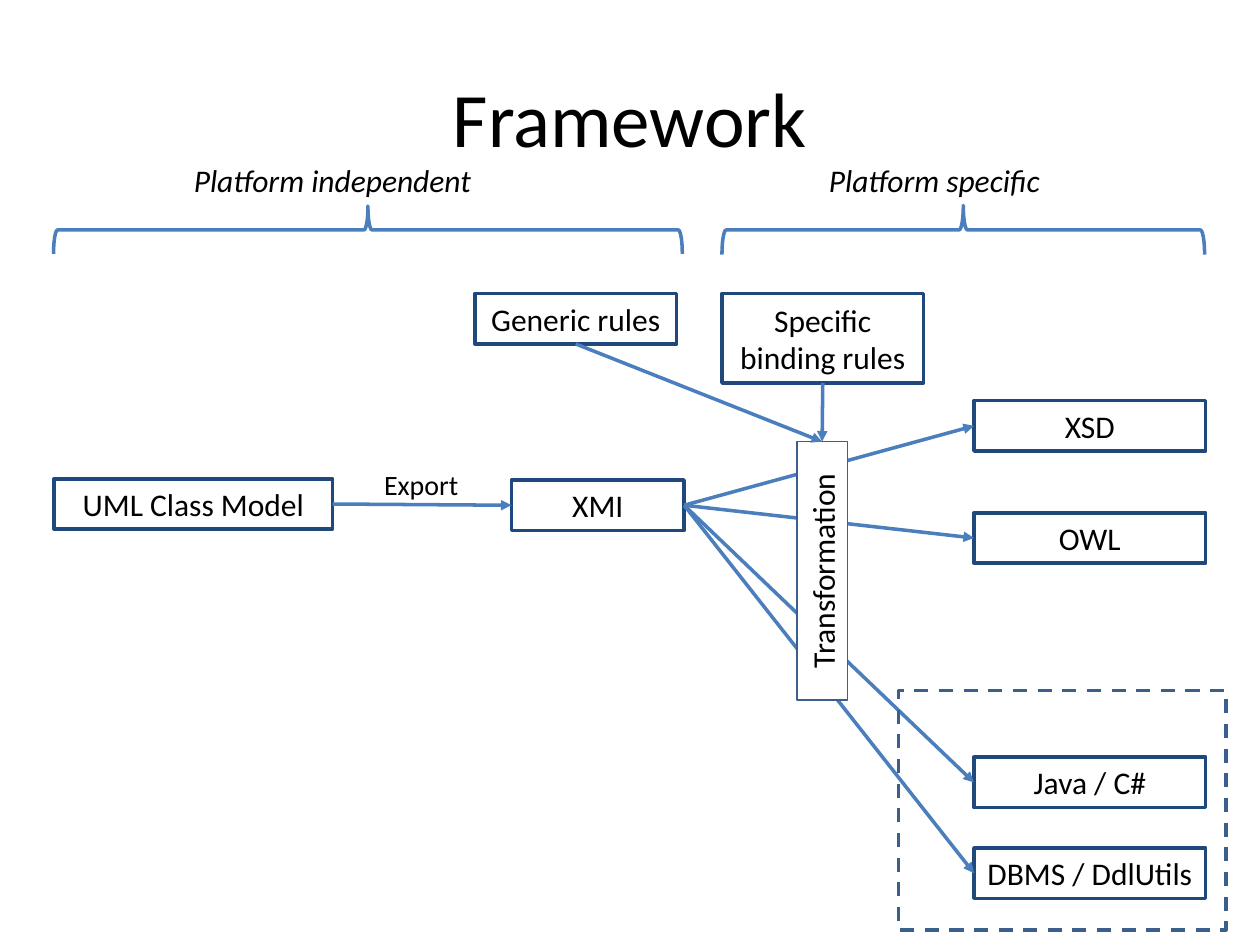
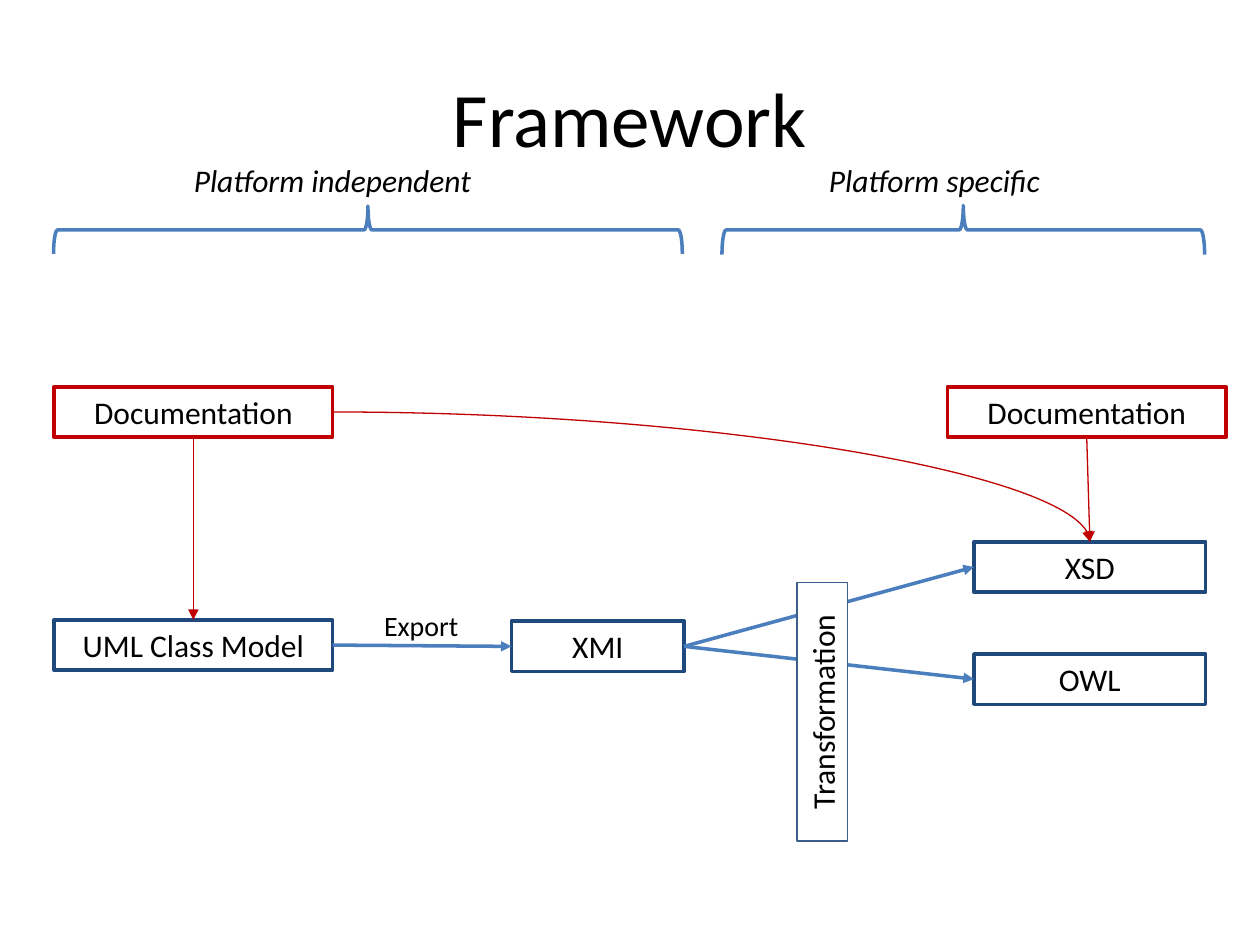
from dataclasses import dataclass

from lxml import etree
from pptx import Presentation
from pptx import util as u
from pptx.dml.color import RGBColor
from pptx.enum import dml, shapes, text
from pptx.oxml.ns import qn

PX = u.Inches(1) // 100  # 100 px to the inch
FONT = "Calibri"
HUES = {"ink": "000000", "paper": "FFFFFF", "navy": "1F497D",
        "blue": "4B7EBC", "steel": "3A5F8C", "red": "C00000"}
TOP, LEFT, BASE, RIGHT = range(4)
KIND = shapes.MSO_SHAPE
SHIFT = 112  # how far the chain moves down on the second slide


@dataclass(frozen=True)
class Box:
    name: str
    x: int
    y: int
    w: int
    h: int = 40
    hue: str = "navy"


@dataclass(frozen=True)
class Span:
    name: str
    text_x: int
    text_w: int
    x: int
    w: int
    h: int


SPANS = [Span("Platform independent", 144, 246, 43, 499, 38),
         Span("Platform specific", 648, 190, 573, 383, 39)]
MODEL = Box("UML Class Model", 43, 380, 221)
XMI = Box("XMI", 406, 381, 137)
OUTS = [Box("XSD", 773, 318, 184), Box("OWL", 773, 407, 184),
        Box("Java / C#", 773, 601, 184), Box("DBMS / DdlUtils", 773, 673, 184)]
STEP = Box("Transformation", 632, 351, 40, 205, "steel")
RULES = [Box("Generic rules", 377, 233, 160),
         Box("Specific binding rules", 573, 233, 160, 71)]
DOCS = [Box("Documentation", x, 307, 221, hue="red") for x in (43, 752)]


def tint(hue: str) -> RGBColor:
    return RGBColor.from_string(HUES[hue])


def write(shape, words: str, *, size: int = 18, italic: bool = False,
          center: bool = True, middle: bool = True, wrap: bool = True):
    frame = shape.text_frame
    frame.word_wrap = wrap
    frame.vertical_anchor = text.MSO_ANCHOR.MIDDLE if middle else text.MSO_ANCHOR.TOP
    para = frame.paragraphs[0]
    para.alignment = text.PP_ALIGN.CENTER if center else text.PP_ALIGN.LEFT
    run = para.add_run()
    run.text = words
    run.font.name, run.font.size, run.font.italic = FONT, u.Pt(size), italic
    run.font.color.rgb = tint("ink")


def label(slide, words: str, x: int, y: int, w: int, h: int, **style):
    area = slide.shapes.add_textbox(x * PX, y * PX, w * PX, h * PX)
    write(area, words, **style)


def outline(slide, kind, x: int, y: int, w: int, h: int, hue: str, *,
            width: float = 2, turn: int = 0, fill: str = ""):
    """Draw a shape in its visible frame, turned by a quarter if asked."""
    if turn:
        half = int((w - h) / 2)
        x, y, w, h = x + half, y - half, h, w
    shape = slide.shapes.add_shape(kind, x * PX, y * PX, w * PX, h * PX)
    shape.rotation = turn
    shape.shadow.inherit = False
    if fill:
        shape.fill.solid()
        shape.fill.fore_color.rgb = tint(fill)
    else:
        shape.fill.background()
    shape.line.color.rgb = tint(hue)
    shape.line.width = u.Pt(width)
    return shape


def block(slide, box: Box, dy: int = 0, **style):
    shape = outline(slide, KIND.RECTANGLE, box.x, box.y + dy, box.w, box.h,
                    box.hue, **style)
    write(shape, box.name)
    return shape


def link(slide, start, out: int, end, into: int, hue: str = "blue",
         width: float = 2, curve: bool = False):
    kind = shapes.MSO_CONNECTOR.CURVE if curve else shapes.MSO_CONNECTOR.STRAIGHT
    line = slide.shapes.add_connector(kind, 0, 0, 0, 0)
    line.begin_connect(start, out)
    line.end_connect(end, into)
    if end.rotation:  # the right side of a shape turned by 270 faces up
        line.end_x = end.left + end.width // 2
        line.end_y = end.top + (end.height - end.width) // 2
    line.line.color.rgb = tint(hue)
    line.line.width = u.Pt(width)
    props = line._element.spPr
    if curve:
        props.find(qn("a:prstGeom")).set("prst", "curvedConnector2")
    etree.SubElement(line.line._get_or_add_ln(), qn("a:tailEnd"), type="triangle")
    etree.SubElement(props, qn("a:effectLst"))


def frame(deck):
    """Add a slide with the title and the two braces."""
    slide = deck.slides.add_slide(deck.slide_layouts[6])
    label(slide, "Framework", 50, 30, 900, 125, size=44)
    for span in SPANS:
        label(slide, span.name, span.text_x, 123, span.text_w, 40,
              italic=True, center=False, middle=False, wrap=False)
        outline(slide, KIND.LEFT_BRACE, span.x, 163, span.w, span.h, "blue", turn=90)
    return slide


def chain(slide, outs: list[Box], dy: int = 0):
    """Draw the path from the model to the outputs."""
    model, xmi = block(slide, MODEL, dy), block(slide, XMI, dy)
    ends = [block(slide, box, dy) for box in outs]
    label(slide, "Export", 295, 366 + dy, 87, 37, size=16, center=False, middle=False)
    link(slide, model, RIGHT, xmi, LEFT)
    for end in ends:
        link(slide, xmi, RIGHT, end, LEFT)
    step = block(slide, STEP, dy, width=0.75, turn=270, fill="paper")
    return model, ends, step


def rules(deck):
    slide = frame(deck)
    step = chain(slide, OUTS)[2]
    for box in RULES:
        link(slide, block(slide, box), BASE, step, RIGHT)
    # Dashed group around the last two outputs
    group = outline(slide, KIND.RECTANGLE, 713, 548, 260, 190, "steel")
    group.line.dash_style = dml.MSO_LINE.DASH


def docs(deck):
    slide = frame(deck)
    model, ends, _ = chain(slide, OUTS[:2], SHIFT)
    first, last = [block(slide, box) for box in DOCS]
    thin = {"hue": "red", "width": 0.75}
    link(slide, first, RIGHT, ends[0], TOP, curve=True, **thin)
    link(slide, first, BASE, model, TOP, **thin)
    link(slide, last, BASE, ends[0], TOP, **thin)


def main():
    deck = Presentation()
    deck.slide_width, deck.slide_height = 1000 * PX, 750 * PX
    rules(deck)
    docs(deck)
    deck.save("out.pptx")


if __name__ == "__main__":
    main()
